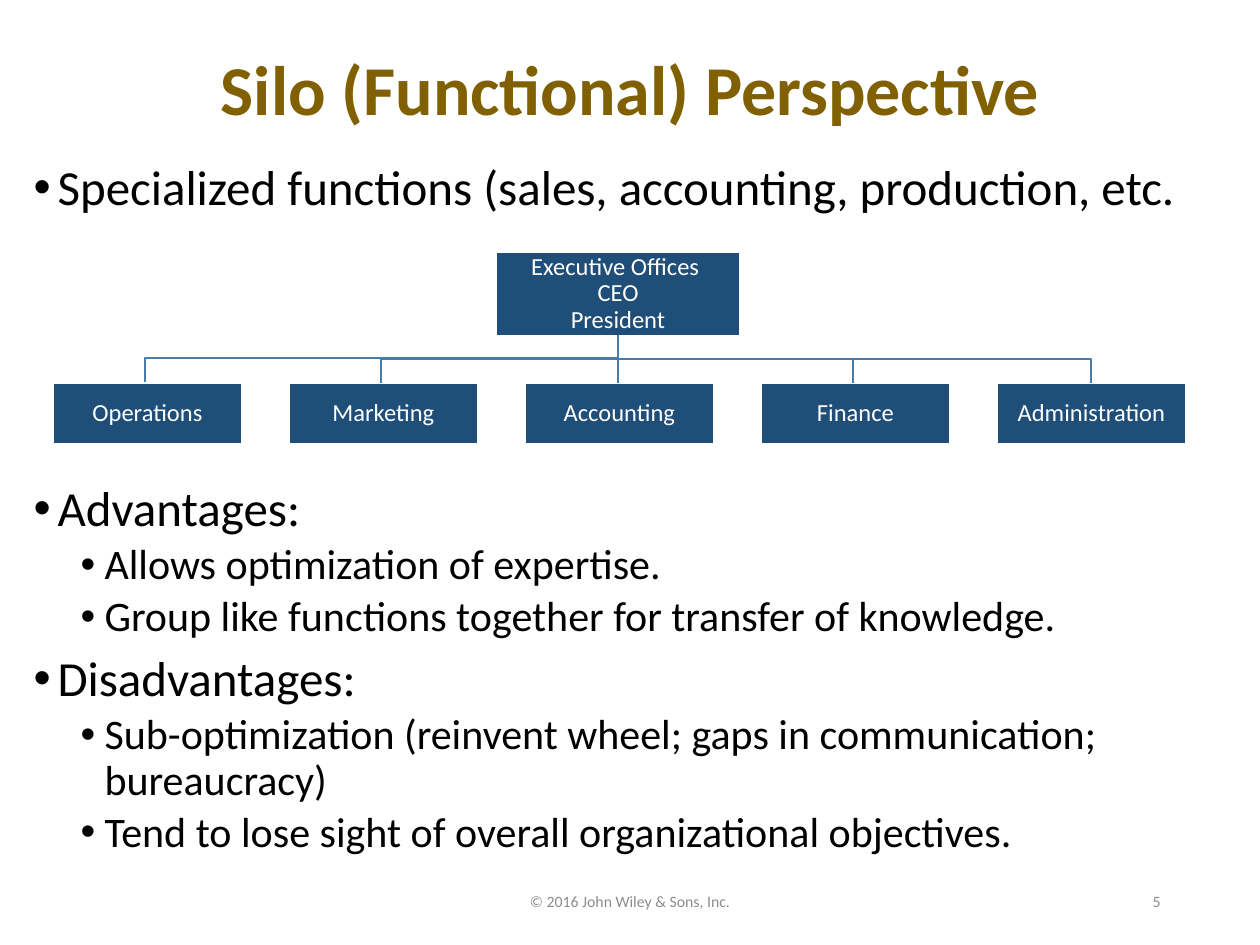
import pptx
import pptx.util
import pptx.dml.color
import pptx.enum.shapes
import pptx.enum.text
import lxml.etree

SCALE = 914400 / 126
FONT = "Calibri"
NAVY, BLUE, WHITE, GREY = "1F4E79", "497CAB", "FFFFFF", "8C8C8C"
ALIGN = pptx.enum.text.PP_ALIGN
MIDDLE = pptx.enum.text.MSO_ANCHOR.MIDDLE

HEAD = "Executive Offices \vCEO\vPresident"
UNITS = ["Operations", "Marketing", "Accounting", "Finance", "Administration"]
# Level, space before in points, text; the wide gap leaves room for the chart.
POINTS = [
    (0, 0, "Specialized functions (sales, accounting, production, etc."),
    (0, 153, "Advantages:"),
    (1, 3.8, "Allows optimization of expertise."),
    (1, 3.8, "Group like functions together for transfer of knowledge."),
    (0, 7.5, "Disadvantages:"),
    (1, 3.8, "Sub-optimization (reinvent wheel; gaps in communication; bureaucracy)"),
    (1, 3.8, "Tend to lose sight of overall organizational objectives."),
]


def px(num):
    return pptx.util.Emu(round(num * SCALE))


def paint(color, code):
    color.rgb = pptx.dml.color.RGBColor.from_string(code)


def place(shape, left, top, width, height):
    shape.left, shape.top = px(left), px(top)
    shape.width, shape.height = px(width), px(height)


def style(para, size, code, align=None, bold=False):
    para.alignment = align
    font = para.font
    font.name, font.size, font.bold = FONT, pptx.util.Pt(size), bold
    paint(font.color, code)


def set_line(line, code):
    paint(line.color, code)
    line.width = pptx.util.Pt(1)


def add_title(slide, text):
    title = slide.shapes.title
    place(title, 63, 38, 1134, 109)
    frame = title.text_frame
    frame.text = text
    frame.auto_size = pptx.enum.text.MSO_AUTO_SIZE.NONE
    frame.vertical_anchor = MIDDLE
    para = frame.paragraphs[0]
    para.line_spacing = 0.9
    style(para, 40, "806000", ALIGN.CENTER, True)


def add_bullet(para, level):
    """Hang a round bullet at the indent of the level."""
    props = para._p.get_or_add_pPr()
    props.set("marL", str(px(24 + 47 * level)))
    props.set("indent", str(px(-24)))
    space = "http://schemas.openxmlformats.org/drawingml/2006/main"
    font = lxml.etree.SubElement(props, f"{{{space}}}buFont")
    font.set("typeface", "Arial")
    mark = lxml.etree.SubElement(props, f"{{{space}}}buChar")
    mark.set("char", "•")


def add_list(slide):
    body = slide.placeholders[1]
    place(body, 21, 157, 1207, 746)
    frame = body.text_frame
    frame.auto_size = pptx.enum.text.MSO_AUTO_SIZE.NONE
    for num, (level, gap, text) in enumerate(POINTS):
        para = frame.add_paragraph() if num else frame.paragraphs[0]
        para.text, para.level = text, level
        add_bullet(para, level)
        para.line_spacing = 0.9
        para.space_before = pptx.util.Pt(gap)
        style(para, 24 if level else 28, "000000", ALIGN.LEFT)


def add_box(slide, text, *area):
    box = slide.shapes.add_shape(
        pptx.enum.shapes.MSO_SHAPE.RECTANGLE, *map(px, area))
    box.shadow.inherit = False
    box.fill.solid()
    paint(box.fill.fore_color, NAVY)
    set_line(box.line, WHITE)
    frame = box.text_frame
    frame.text = text
    frame.word_wrap = True
    frame.vertical_anchor = MIDDLE
    frame.margin_left = frame.margin_right = px(1)
    frame.margin_top = frame.margin_bottom = px(1)
    para = frame.paragraphs[0]
    para.line_spacing = 0.9
    style(para, 14, WHITE, ALIGN.CENTER)


def add_link(slide, hub, end, top):
    """Draw the bent line from the hub down to one unit."""
    bend, foot = top + 23, top + 47
    path = slide.shapes.build_freeform(px(hub), px(top))
    turns = [(hub, bend), (end, bend)] if end != hub else []
    path.add_line_segments(
        [(px(x), px(y)) for x, y in turns + [(end, foot)]], close=False)
    link = path.convert_to_shape()
    link.shadow.inherit = False
    link.fill.background()
    set_line(link.line, BLUE)


def add_chart(slide):
    add_box(slide, HEAD, 496, 252, 244, 84)
    for num, name in enumerate(UNITS):
        add_box(slide, name, 53 + 236 * num, 383, 189, 61)
    for num, end in enumerate([145, 381, 618, 853, 1091]):
        add_link(slide, 618, end, 336 if num else 335)


def add_note(slide, text, align, *area):
    box = slide.shapes.add_textbox(*map(px, area))
    frame = box.text_frame
    frame.text = text
    frame.word_wrap = True
    frame.vertical_anchor = MIDDLE
    style(frame.paragraphs[0], 9, GREY, align)


def main():
    deck = pptx.Presentation()
    deck.slide_width, deck.slide_height = px(1260), px(945)
    slide = deck.slides.add_slide(deck.slide_layouts[1])
    add_title(slide, "Silo (Functional) Perspective")
    add_list(slide)
    add_chart(slide)
    add_note(slide, "© 2016 John Wiley & Sons, Inc.", ALIGN.CENTER,
             417, 876, 426, 50)
    add_note(slide, "5", ALIGN.RIGHT, 890, 876, 283, 50)
    deck.save("out.pptx")


if __name__ == "__main__":
    main()
